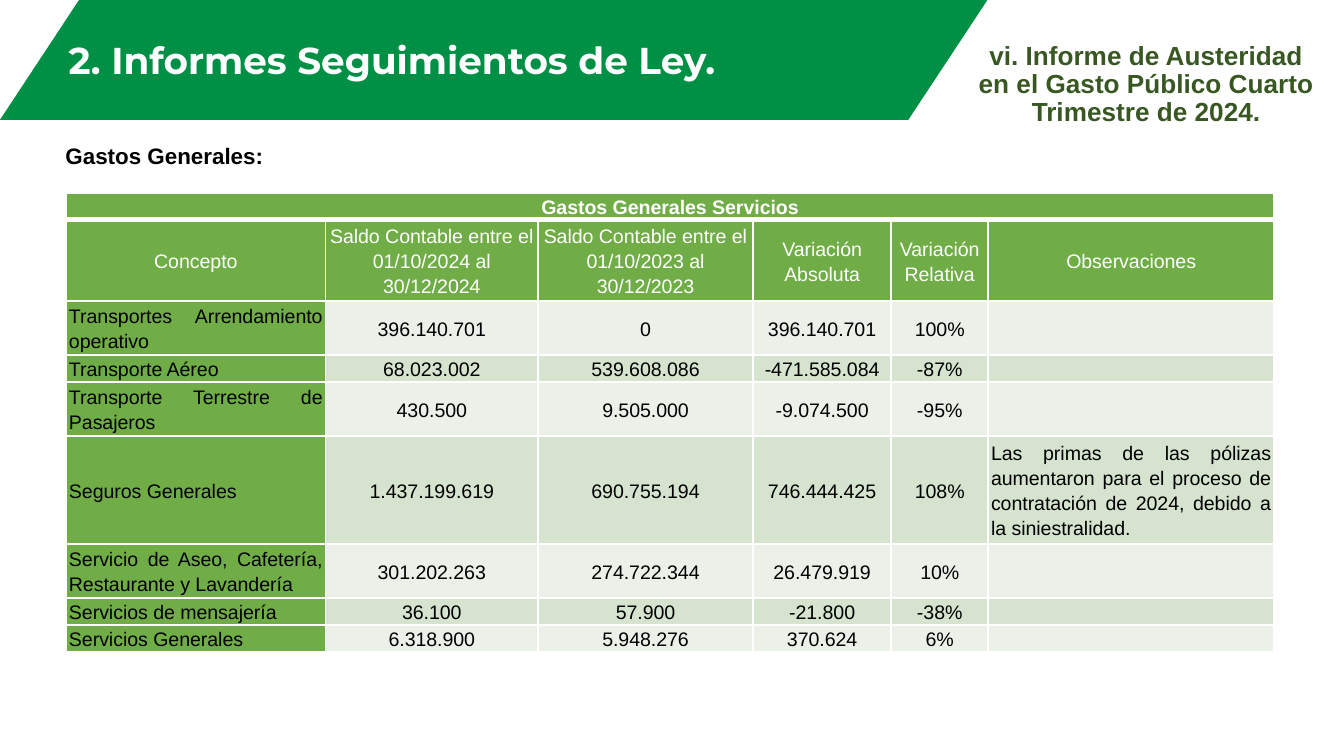
from dataclasses import dataclass
from typing import Any, Optional

import pptx
import pptx.dml.color
import pptx.enum.shapes
import pptx.enum.text
import pptx.oxml
import pptx.oxml.ns
import pptx.util

Pt = pptx.util.Pt
Color = pptx.dml.color.RGBColor.from_string
Align = pptx.enum.text.PP_ALIGN
Anchor = pptx.enum.text.MSO_ANCHOR


@dataclass(frozen=True)
class Theme:
    banner: str = "009045"
    header: str = "70AD47"
    bands: tuple = ("EBF1E9", "D5E3CF")
    subtitle: str = "385723"
    white: str = "FFFFFF"
    ink: str = "000000"
    font: str = "Arial"
    title_font: str = "Montserrat"
    title_size: float = 20
    subtitle_size: float = 14
    section_size: float = 12
    table_size: float = 10.5
    rule: float = 1
    thick_rule: float = 3


THEME = Theme()


@dataclass(frozen=True)
class TextStyle:
    size: float
    color: str
    bold: bool = False
    font: str = THEME.font
    align: Any = Align.CENTER
    spacing: float = 1.0


@dataclass(frozen=True)
class Label:
    text: str
    left: float
    top: float
    width: float
    height: float
    style: TextStyle
    anchor: Any = Anchor.TOP


@dataclass(frozen=True)
class Expense:
    lines: int
    concept: str
    balance_2024: str
    balance_2023: str
    absolute: str
    relative: str
    remark: str = ""

    def values(self) -> list[str]:
        return [self.concept, self.balance_2024, self.balance_2023,
                self.absolute, self.relative, self.remark]


LABELS = [
    Label("2. Informes Seguimientos de Ley.", 0, 16.6, 420, 31,
          TextStyle(THEME.title_size, THEME.white, True, THEME.title_font, spacing=0.9),
          Anchor.BOTTOM),
    Label("vi. Informe de Austeridad en el Gasto Público Cuarto Trimestre de 2024.",
          514, 19.4, 200, 53.3,
          TextStyle(THEME.subtitle_size, THEME.subtitle, True, spacing=0.9)),
    Label("Gastos Generales:", 28, 72.7, 128, 21.6,
          TextStyle(THEME.section_size, THEME.ink, True, align=Align.JUSTIFY)),
]

TABLE_TITLE = "Gastos Generales Servicios"
HEADINGS = ["Concepto", "Saldo Contable entre el 01/10/2024 al 30/12/2024",
            "Saldo Contable entre el 01/10/2023 al 30/12/2023",
            "Variación Absoluta", "Variación Relativa", "Observaciones"]
EXPENSES = [
    Expense(2, "Transportes Arrendamiento operativo", "396.140.701", "0", "396.140.701", "100%"),
    Expense(1, "Transporte Aéreo", "68.023.002", "539.608.086", "-471.585.084", "-87%"),
    Expense(2, "Transporte Terrestre de Pasajeros", "430.500", "9.505.000", "-9.074.500", "-95%"),
    Expense(4, "Seguros Generales", "1.437.199.619", "690.755.194", "746.444.425", "108%",
            "Las primas de las pólizas aumentaron para el proceso de contratación "
            "de 2024, debido a la siniestralidad."),
    Expense(2, "Servicio de Aseo, Cafetería, Restaurante y Lavandería",
            "301.202.263", "274.722.344", "26.479.919", "10%"),
    Expense(1, "Servicios de mensajería", "36.100", "57.900", "-21.800", "-38%"),
    Expense(1, "Servicios Generales", "6.318.900", "5.948.276", "370.624", "6%"),
]
COLUMN_WIDTHS = [139, 113.8, 115.2, 74, 52, 153.2]
LINE_HEIGHT = 14.47
TABLE_LEFT, TABLE_TOP = 35.5, 103.3


def apply(target: Any, values: dict[str, Any]) -> None:
    for name, value in values.items():
        setattr(target, name, value)


def write(frame: Any, text: str, style: TextStyle) -> None:
    para = frame.paragraphs[0]
    apply(para, {"alignment": style.align, "line_spacing": style.spacing})
    if not text:
        # An empty cell keeps the table's type size, so its row does not grow.
        end = pptx.oxml.parse_xml(
            f'<a:endParaRPr {pptx.oxml.ns.nsdecls("a")} sz="{int(style.size * 100)}"/>')
        para._p.append(end)
        return
    span = para.add_run()
    span.text = text
    apply(span.font, {"size": Pt(style.size), "bold": style.bold, "name": style.font})
    span.font.color.rgb = Color(style.color)


def add_label(page: Any, label: Label) -> None:
    box = page.shapes.add_textbox(*map(Pt, (label.left, label.top, label.width, label.height)))
    apply(box.text_frame, {"word_wrap": True, "vertical_anchor": label.anchor})
    write(box.text_frame, label.text, label.style)


def add_banner(page: Any) -> None:
    banner = page.shapes.add_shape(pptx.enum.shapes.MSO_SHAPE.PARALLELOGRAM,
                                   Pt(0), Pt(0), Pt(529), Pt(64.2))
    banner.adjustments[0] = 0.66
    banner.shadow.inherit = False
    banner.fill.solid()
    banner.fill.fore_color.rgb = Color(THEME.banner)
    banner.line.fill.background()


def set_borders(cell: Any, top: float, bottom: float) -> None:
    sides = {"lnL": THEME.rule, "lnR": THEME.rule, "lnT": top, "lnB": bottom}
    for index, (tag, width) in enumerate(sides.items()):
        line = pptx.oxml.parse_xml(
            f'<a:{tag} {pptx.oxml.ns.nsdecls("a")} w="{Pt(width)}"><a:solidFill>'
            f'<a:srgbClr val="{THEME.white}"/></a:solidFill></a:{tag}>')
        cell._tc.get_or_add_tcPr().insert(index, line)


def fill_cell(cell: Any, text: str, fill: str, style: TextStyle,
              top: Optional[float] = None, bottom: Optional[float] = None) -> None:
    apply(cell, {"margin_left": Pt(1.5), "margin_right": Pt(1.5), "margin_top": Pt(0),
                 "margin_bottom": Pt(0), "vertical_anchor": Anchor.MIDDLE})
    cell.fill.solid()
    cell.fill.fore_color.rgb = Color(fill)
    set_borders(cell, top or THEME.rule, bottom or THEME.rule)
    write(cell.text_frame, text, style)


def add_expense_table(page: Any) -> None:
    row_lines = [1, 3] + [expense.lines for expense in EXPENSES]
    table = page.shapes.add_table(
        len(row_lines), len(HEADINGS), Pt(TABLE_LEFT), Pt(TABLE_TOP),
        Pt(sum(COLUMN_WIDTHS)), Pt(LINE_HEIGHT * sum(row_lines))).table
    apply(table, {"first_row": False, "horz_banding": False})
    for column, width in zip(table.columns, COLUMN_WIDTHS):
        column.width = Pt(width)
    for row, lines in zip(table.rows, row_lines):
        row.height = Pt(LINE_HEIGHT * lines)

    size = THEME.table_size
    title = TextStyle(size, THEME.white, True, spacing=1.15)
    heading = TextStyle(size, THEME.white, spacing=1.15)
    value = TextStyle(size, THEME.ink, spacing=1.15)
    prose = TextStyle(size, THEME.ink, align=Align.JUSTIFY, spacing=1.15)

    last = len(HEADINGS) - 1
    for column, text in enumerate(HEADINGS):
        fill_cell(table.cell(0, column), "" if column else TABLE_TITLE, THEME.header,
                  title, bottom=THEME.thick_rule)
        fill_cell(table.cell(1, column), text, THEME.header, heading, top=THEME.thick_rule)
    table.cell(0, 0).merge(table.cell(0, last))

    for index, expense in enumerate(EXPENSES):
        for column, text in enumerate(expense.values()):
            fill = THEME.bands[index % 2] if column else THEME.header
            fill_cell(table.cell(index + 2, column), text, fill,
                      prose if column in (0, last) else value)


def main() -> None:
    deck = pptx.Presentation()
    apply(deck, {"slide_width": Pt(720), "slide_height": Pt(405)})
    page = deck.slides.add_slide(deck.slide_layouts[6])
    add_banner(page)
    for label in LABELS:
        add_label(page, label)
    add_expense_table(page)
    deck.save("out.pptx")


if __name__ == "__main__":
    main()
